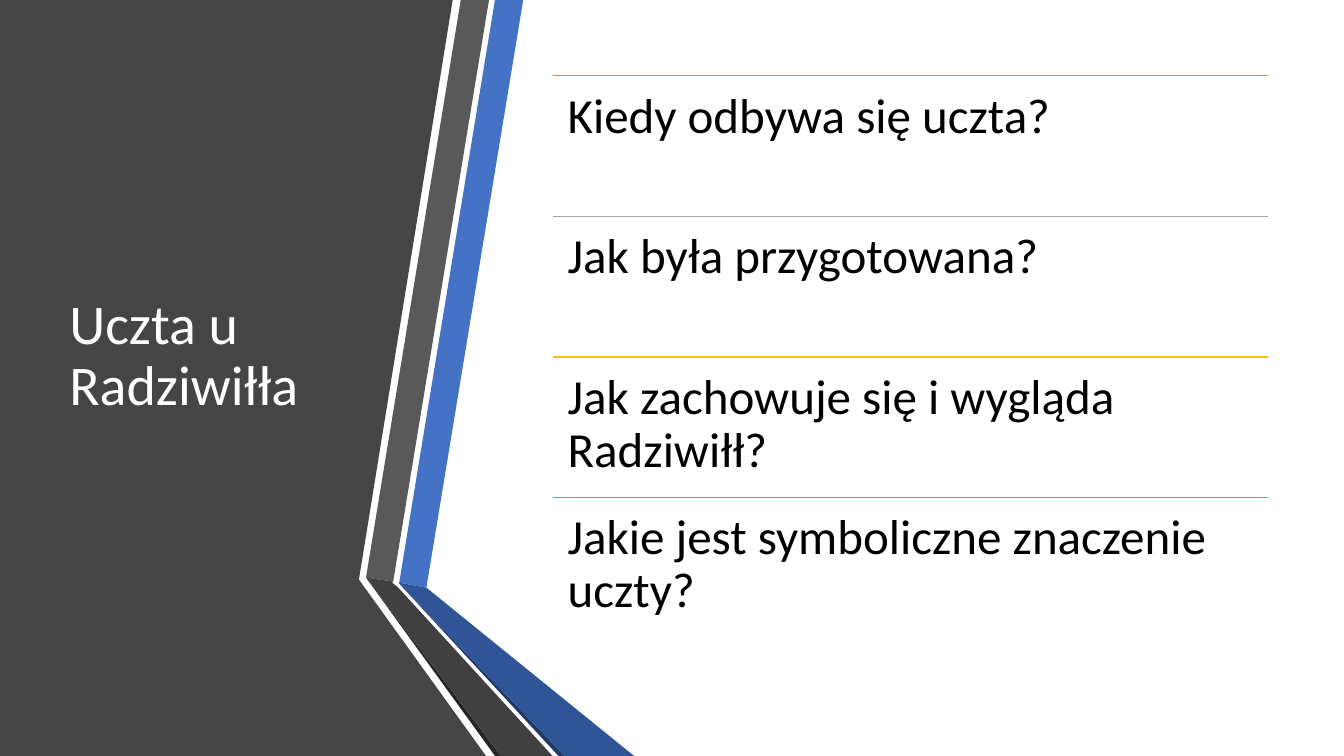
from lxml import etree
from pptx import Presentation
from pptx.dml.color import RGBColor
from pptx.enum.shapes import MSO_CONNECTOR
from pptx.enum.text import MSO_ANCHOR
from pptx.oxml.ns import qn
from pptx.util import Inches, Pt

LINE = MSO_CONNECTOR.STRAIGHT
TOP = MSO_ANCHOR.TOP
MIDDLE = MSO_ANCHOR.MIDDLE

WHITE = RGBColor(0xFF, 0xFF, 0xFF)
BLACK = RGBColor(0x00, 0x00, 0x00)
PANEL = RGBColor(0x45, 0x45, 0x45)
BLUE = RGBColor(0x44, 0x72, 0xC4)
GREY = RGBColor(0x59, 0x59, 0x59)
COAL = RGBColor(0x26, 0x26, 0x26)
NAVY = RGBColor(0x20, 0x38, 0x64)
DEEP = RGBColor(0x2F, 0x55, 0x97)
DARK = RGBColor(0x40, 0x40, 0x40)
ORANGE = RGBColor(0xED, 0x7D, 0x31)
SILVER = RGBColor(0xA5, 0xA5, 0xA5)
GOLD = RGBColor(0xFF, 0xC0, 0x00)
SKY = RGBColor(0x5B, 0x9B, 0xD5)

EDGE = [(3.53, 0), (4.49, 0), (3.56, 5.75), (4.82, 7.5), (0, 7.5), (0, 0)]
FOLDS = [
    (BLUE, [(3.96, 5.78), (4.23, 5.83), (5.19, 0), (4.91, 0)]),
    (GREY, [(4.85, 0), (4.57, 0), (3.63, 5.73), (3.9, 5.77)]),
    (COAL, [(3.63, 5.73), (4.91, 7.5), (4.97, 7.5)]),
    (NAVY, [(3.96, 5.79), (5.54, 7.5), (5.6, 7.5)]),
    (DEEP, [(3.96, 5.79), (5.6, 7.5), (6.29, 7.5), (4.23, 5.83), (3.96, 5.78)]),
    (DARK, [(5.48, 7.5), (3.95, 5.83), (3.89, 5.78), (3.9, 5.77),
            (3.63, 5.73), (4.97, 7.5)]),
]
TASKS = [
    (ORANGE, "Kiedy odbywa się uczta?"),
    (SILVER, "Jak była przygotowana?"),
    (GOLD, "Jak zachowuje się i wygląda Radziwiłł?"),
    (SKY, "Jakie jest symboliczne znaczenie uczty?"),
]


def apply(target, values):
    for name, value in values.items():
        setattr(target, name, value)


def add_text(shapes, box, text, size, color, anchor, pad):
    frame = shapes.add_textbox(*map(Inches, box)).text_frame
    side, edge = map(Inches, pad)
    apply(frame, {"word_wrap": True, "vertical_anchor": anchor,
                  "margin_left": side, "margin_right": side,
                  "margin_top": edge, "margin_bottom": edge})
    para = frame.paragraphs[0]
    para.line_spacing = 0.9
    run = para.add_run()
    run.text = text
    apply(run.font, {"name": "Calibri", "size": Pt(size)})
    run.font.color.rgb = color


def add_fold(shapes, box, color, points):
    left, top = box[:2]
    spots = [(Inches(left + x), Inches(top + y)) for x, y in points]
    form = shapes.build_freeform(*spots[0])
    form.add_line_segments(spots[1:], close=True)
    shape = form.convert_to_shape()
    shape.shadow.inherit = False
    shape.fill.solid()
    shape.fill.fore_color.rgb = color
    shape.line.fill.background()


def add_rule(shapes, left, top, width, color):
    rule = shapes.add_connector(
        LINE, *map(Inches, (left, top, left + width, top)))
    rule.line.color.rgb = color
    rule.line.width = Pt(1)
    etree.SubElement(rule._element.spPr, qn("a:effectLst"))


def add_panel(slide, box):
    left, top = box[:2]
    add_fold(slide.shapes, box, PANEL, EDGE)
    band = slide.shapes.add_group_shape().shapes
    for color, points in FOLDS:
        add_fold(band, box, color, points)
    add_text(slide.shapes, (left + 0.59, top + 0.75, 3.04, 5.58),
             "Uczta u Radziwiłła", 40, WHITE, MIDDLE, (0.1, 0.05))


def add_list(slide, box):
    left, top, width, height = box
    step = height / len(TASKS)
    items = slide.shapes.add_group_shape().shapes
    for row, (color, text) in enumerate(TASKS):
        y = top + row * step
        add_rule(items, left, y, width, color)
        add_text(items, (left, y, width, step), text, 35, BLACK, TOP,
                 (0.15, 0.15))


def main():
    deck = Presentation()
    apply(deck, {"slide_width": Inches(13.33), "slide_height": Inches(7.5)})
    slide = deck.slides.add_slide(deck.slide_layouts[6])
    add_panel(slide, (0, 0, 6.29, 7.5))
    add_list(slide, (5.48, 0.75, 7.1, 5.58))
    deck.save("out.pptx")


if __name__ == "__main__":
    main()
